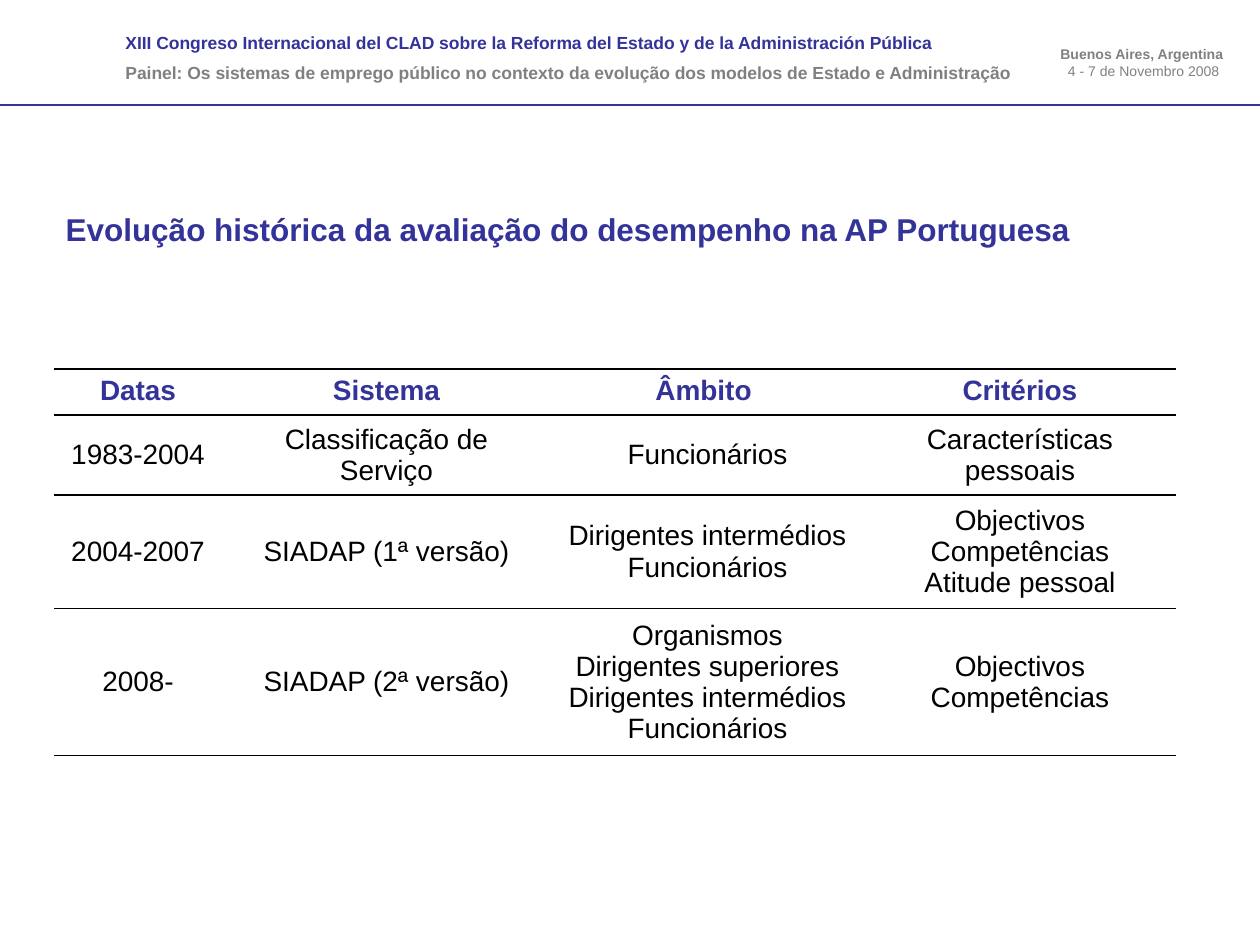
"""Builds the slide on the history of performance appraisal in Portugal."""
from lxml import etree
from pptx import Presentation
from pptx import util as u
from pptx.dml.color import RGBColor
from pptx.enum import shapes, text
from pptx.oxml.ns import qn

PX = u.Inches(1) // 126
FONT = "Arial"
BLUE = RGBColor(0x33, 0x33, 0x99)
GRAY = RGBColor(0x80, 0x80, 0x80)
BLACK = RGBColor(0, 0, 0)

COLUMN_WIDTHS = [168, 329, 313, 312]
ROW_HEIGHTS = [46, 80, 113, 147]
ROWS = [
    ["Datas", "Sistema", "Âmbito ", "Critérios"],
    ["1983-2004", "Classificação de Serviço", "Funcionários", "Características pessoais"],
    ["2004-2007", "SIADAP (1ª versão)", "Dirigentes intermédios\nFuncionários",
     "Objectivos\nCompetências\nAtitude pessoal"],
    ["2008-", "SIADAP (2ª versão)",
     "Organismos\nDirigentes superiores\nDirigentes intermédios\nFuncionários",
     "Objectivos\nCompetências"],
]


def add_run(paragraph, words, size, color, bold=False):
    run = paragraph.add_run()
    run.text = words
    run.font.name = FONT
    run.font.size = u.Pt(size)
    run.font.bold = bold
    run.font.color.rgb = color


def add_text_box(slide, left, top, width, height, wrap):
    box = slide.shapes.add_textbox(left * PX, top * PX, width * PX, height * PX)
    box.text_frame.word_wrap = wrap
    return box.text_frame


def add_event_header(slide):
    frame = add_text_box(slide, 113, 26, 930, 66, True)
    add_run(frame.paragraphs[0], "XIII Congreso Internacional del CLAD sobre la Reforma "
            "del Estado y de la Administración Pública", 10, BLUE, True)
    panel = frame.add_paragraph()
    panel.space_before = u.Pt(5)
    add_run(panel, "Painel: Os sistemas de emprego público no contexto da evolução "
            "dos modelos de Estado e Administração", 10, GRAY, True)


def add_place_and_date(slide):
    frame = add_text_box(slide, 1047, 39, 189, 47, False)
    frame.vertical_anchor = text.MSO_ANCHOR.MIDDLE
    paragraph = frame.paragraphs[0]
    paragraph.alignment = text.PP_ALIGN.RIGHT
    add_run(paragraph, "Buenos Aires, Argentina", 8, GRAY, True)
    paragraph.add_line_break()
    add_run(paragraph, "4 - 7 de Novembro 2008 ", 8, GRAY)


def add_header_rule(slide, width):
    rule = slide.shapes.add_connector(
        shapes.MSO_CONNECTOR.STRAIGHT, 0, 105 * PX, width, 105 * PX)
    rule.line.color.rgb = BLUE
    rule.line.width = u.Pt(0.75)
    etree.SubElement(rule._element.spPr, qn("a:effectLst"))


def set_title(slide, words):
    title = slide.shapes.title
    title.left, title.top, title.width, title.height = (
        length * PX for length in (53, 204, 1032, 50))
    frame = title.text_frame
    frame.word_wrap = False
    frame.auto_size = text.MSO_AUTO_SIZE.NONE
    frame.vertical_anchor = text.MSO_ANCHOR.MIDDLE
    frame.paragraphs[0].alignment = text.PP_ALIGN.LEFT
    add_run(frame.paragraphs[0], words, 18, BLUE, True)


def set_borders(cell):
    properties = cell._tc.get_or_add_tcPr()
    for side in ("lnL", "lnR", "lnT", "lnB"):
        line = etree.SubElement(properties, qn(f"a:{side}"), w=str(u.Pt(1)))
        if side in ("lnL", "lnR"):
            etree.SubElement(line, qn("a:noFill"))
        else:
            fill = etree.SubElement(line, qn("a:solidFill"))
            etree.SubElement(fill, qn("a:srgbClr"), val=str(BLACK))


def fill_cell(cell, words, is_heading):
    set_borders(cell)
    cell.fill.background()
    if not is_heading:
        cell.vertical_anchor = text.MSO_ANCHOR.MIDDLE
    frame = cell.text_frame
    for index, line in enumerate(words.split("\n")):
        paragraph = frame.add_paragraph() if index else frame.paragraphs[0]
        paragraph.alignment = text.PP_ALIGN.CENTER
        add_run(paragraph, line, 16, BLUE if is_heading else BLACK, is_heading)


def add_history_table(slide):
    table = slide.shapes.add_table(
        len(ROWS), len(COLUMN_WIDTHS), 54 * PX, 369 * PX,
        sum(COLUMN_WIDTHS) * PX, sum(ROW_HEIGHTS) * PX).table
    table.first_row = table.horz_banding = False
    for column, width in zip(table.columns, COLUMN_WIDTHS):
        column.width = width * PX
    for row_index, (row, height) in enumerate(zip(table.rows, ROW_HEIGHTS)):
        row.height = height * PX
        for cell, words in zip(row.cells, ROWS[row_index]):
            fill_cell(cell, words, row_index == 0)


def main():
    presentation = Presentation()
    presentation.slide_width = 1260 * PX
    presentation.slide_height = 945 * PX
    slide = presentation.slides.add_slide(presentation.slide_layouts[5])
    add_event_header(slide)
    add_place_and_date(slide)
    add_header_rule(slide, presentation.slide_width)
    set_title(slide, "Evolução histórica da avaliação do desempenho na AP Portuguesa")
    add_history_table(slide)
    presentation.save("out.pptx")


if __name__ == "__main__":
    main()
